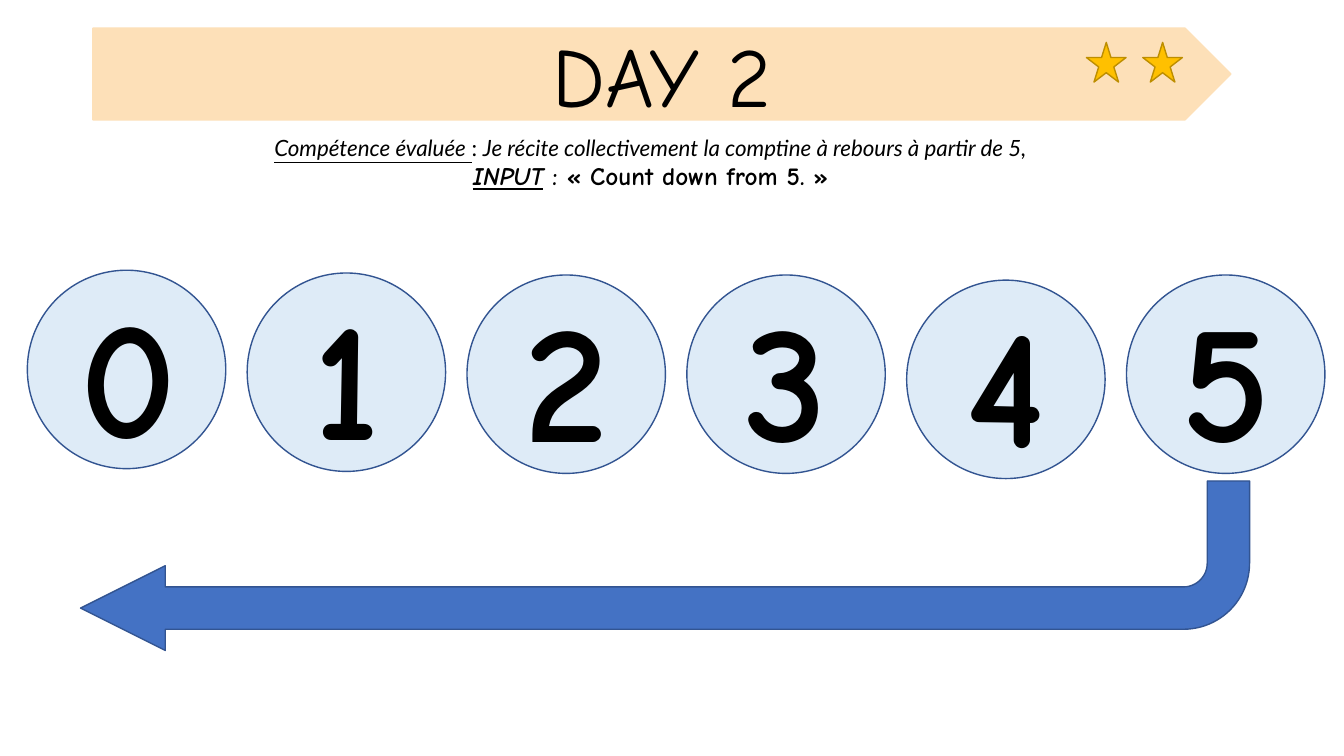
from dataclasses import dataclass

import pptx
import pptx.dml.color
import pptx.enum.shapes
import pptx.enum.text
import pptx.util

Cm = pptx.util.Cm
Pt = pptx.util.Pt
RGBColor = pptx.dml.color.RGBColor
Preset = pptx.enum.shapes.MSO_SHAPE

BLACK = RGBColor(0x00, 0x00, 0x00)
BLUE = RGBColor(0x44, 0x72, 0xC4)
DARK_BLUE = RGBColor(0x32, 0x54, 0x91)
PALE_BLUE = RGBColor(0xDE, 0xEB, 0xF7)
PEACH = RGBColor(0xFD, 0xE0, 0xB8)
GOLD = RGBColor(0xFF, 0xC0, 0x00)
DARK_GOLD = RGBColor(0xBD, 0x8E, 0x00)

DISPLAY_FONT = "Comic Neue"
BODY_FONT = "Lato"

CIRCLE_SIZE = 5.0
CIRCLE_LEFT = 0.69
CIRCLE_PITCH = 5.54
CIRCLE_TOPS = (6.81, 6.88, 6.93, 6.93, 7.06, 6.93)
DIGIT_WIDTH, DIGIT_HEIGHT = 2.84, 5.38
DIGIT_RISE = 0.13


@dataclass(frozen=True)
class Box:
    """Position and size in centimetres."""
    left: float
    top: float
    width: float
    height: float

    def lengths(self) -> tuple:
        return Cm(self.left), Cm(self.top), Cm(self.width), Cm(self.height)


@dataclass(frozen=True)
class Passage:
    text: str
    size: float
    font: str = DISPLAY_FONT
    bold: bool = False
    italic: bool = False
    underline: bool = False


def draw_shape(slide, preset, box: Box, fill: RGBColor, line: RGBColor):
    shape = slide.shapes.add_shape(preset, *box.lengths())
    shape.shadow.inherit = False
    shape.fill.solid()
    shape.fill.fore_color.rgb = fill
    shape.line.color.rgb = line
    shape.line.width = Pt(1)
    return shape


def write_paragraphs(frame, paragraphs: list[list[Passage]]) -> None:
    frame.word_wrap = True
    frame.auto_size = pptx.enum.text.MSO_AUTO_SIZE.SHAPE_TO_FIT_TEXT
    frame.vertical_anchor = pptx.enum.text.MSO_ANCHOR.TOP
    for index, passages in enumerate(paragraphs):
        paragraph = frame.add_paragraph() if index else frame.paragraphs[0]
        paragraph.alignment = pptx.enum.text.PP_ALIGN.CENTER
        for passage in passages:
            run = paragraph.add_run()
            run.text = passage.text
            run.font.name = passage.font
            run.font.size = Pt(passage.size)
            run.font.bold = passage.bold
            run.font.italic = passage.italic
            run.font.underline = passage.underline
            run.font.color.rgb = BLACK


def draw_text(slide, box: Box, paragraphs: list[list[Passage]]) -> None:
    textbox = slide.shapes.add_textbox(*box.lengths())
    write_paragraphs(textbox.text_frame, paragraphs)


def draw_number(slide, number: int, top: float) -> None:
    left = CIRCLE_LEFT + number * CIRCLE_PITCH
    draw_shape(slide, Preset.OVAL, Box(left, top, CIRCLE_SIZE, CIRCLE_SIZE),
               PALE_BLUE, DARK_BLUE)
    digit_box = Box(left + (CIRCLE_SIZE - DIGIT_WIDTH) / 2, top - DIGIT_RISE,
                    DIGIT_WIDTH, DIGIT_HEIGHT)
    draw_text(slide, digit_box, [[Passage(str(number), 120, bold=True)]])


def draw_banner(slide) -> None:
    draw_shape(slide, Preset.PENTAGON, Box(2.34, 0.71, 28.68, 2.31), PEACH, PEACH)
    # The title placeholder comes forward, over the banner
    title = slide.shapes.title
    title.element.getparent().append(title.element)
    title.left, title.top, title.width, title.height = Box(
        7.14, 0.46, 19.08, 2.82).lengths()
    write_paragraphs(title.text_frame, [[Passage("DAY 2", 60)]])
    for star_left in (27.38, 28.8):
        draw_shape(slide, Preset.STAR_5_POINT, Box(star_left, 1.07, 1, 1),
                   GOLD, DARK_GOLD)


def main() -> None:
    deck = pptx.Presentation()
    deck.slide_width, deck.slide_height = Cm(33.87), Cm(19.05)
    slide = deck.slides.add_slide(deck.slide_layouts.get_by_name("Title Only"))

    # Countdown arrow, from 5 back to 0
    countdown = draw_shape(slide, Preset.BENT_ARROW, Box(2.03, 12.12, 29.46, 4.27),
                           BLUE, DARK_BLUE)
    countdown.rotation = 180
    for index, ratio in enumerate((0.25, 0.25, 0.5, 0.39)):
        countdown.adjustments[index] = ratio

    # Numbers in circles
    for number, top in enumerate(CIRCLE_TOPS):
        draw_number(slide, number, top)

    # Banner with title and stars
    draw_banner(slide)

    # Assessed skill and instruction
    draw_text(slide, Box(2.59, 3.25, 27.61, 1.7), [
        [
            Passage("Compétence évaluée", 16, BODY_FONT, italic=True, underline=True),
            Passage(" ", 16, BODY_FONT, underline=True),
            Passage(": ", 16, BODY_FONT),
            Passage("Je récite collectivement la comptine à rebours à partir de 5,",
                    16, BODY_FONT, italic=True),
        ],
        [
            Passage("INPUT", 18, bold=True, italic=True, underline=True),
            Passage(" : « Count down from 5. »", 18, bold=True),
        ],
    ])

    deck.save("out.pptx")


if __name__ == "__main__":
    main()
